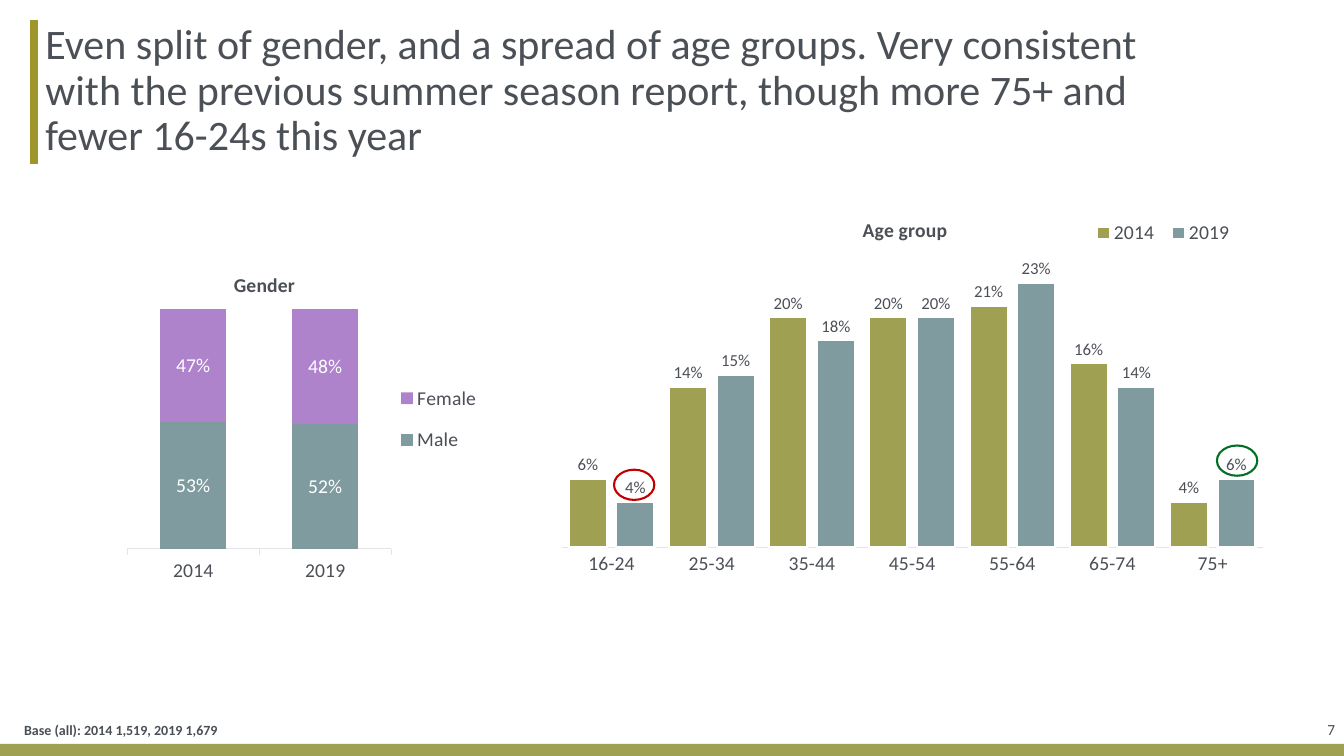
import dataclasses

import pptx
import pptx.chart.data
import pptx.dml.color
import pptx.enum.chart
import pptx.enum.shapes
import pptx.enum.text
import pptx.oxml
import pptx.oxml.ns
import pptx.util

Inches = pptx.util.Inches
Pt = pptx.util.Pt
Color = pptx.dml.color.RGBColor.from_string
Chart = pptx.enum.chart
Align = pptx.enum.text.PP_ALIGN


@dataclasses.dataclass(frozen=True)
class Theme:
    font: str = "Calibri"
    ink: str = "4B4F56"
    white: str = "FFFFFF"
    olive: str = "9FA052"
    bar: str = "9F962B"
    teal: str = "7F9B9F"
    purple: str = "AF82CC"
    axis: str = "E3E4E7"
    rise: str = "007024"
    fall: str = "C00000"
    headline: int = 30
    chart: int = 14
    value: int = 12
    number: int = 11
    base: int = 10


theme = Theme()


def add_text(text, at, size, bold=False, align=Align.LEFT, spacing=1.0, left=0.08, right=0):
    box = page.shapes.add_textbox(*map(Inches, at))
    frame = box.text_frame
    frame.word_wrap = True
    frame.vertical_anchor = pptx.enum.text.MSO_ANCHOR.MIDDLE
    frame.margin_left, frame.margin_right = Inches(left), Inches(right)
    frame.margin_top = frame.margin_bottom = 0
    para = frame.paragraphs[0]
    para.alignment = align
    para.line_spacing = spacing
    span = para.add_run()
    span.text = text
    span.font.name = theme.font
    span.font.size = Pt(size)
    span.font.bold = bold
    span.font.color.rgb = Color(theme.ink)


def set_layout(parent, index, inner=False, **place):
    for old in parent.findall(pptx.oxml.ns.qn("c:layout")):
        parent.remove(old)
    settings = [("layoutTarget", "inner")] if inner else []
    settings += [("xMode", "edge"), ("yMode", "edge"), *place.items()]
    items = "".join(f'<c:{name} val="{value}"/>' for name, value in settings)
    parent.insert(index, pptx.oxml.parse_xml(
        f'<c:layout {pptx.oxml.ns.nsdecls("c")}><c:manualLayout>{items}</c:manualLayout></c:layout>'))


deck = pptx.Presentation()
deck.slide_width = Inches(13.33)
deck.slide_height = Inches(7.5)
page = deck.slides.add_slide(deck.slide_layouts[6])

band = page.shapes.add_shape(pptx.enum.shapes.MSO_SHAPE.RECTANGLE,
                             0, Inches(7.38), deck.slide_width, Inches(0.12))
band.shadow.inherit = False
band.fill.solid()
band.fill.fore_color.rgb = Color(theme.olive)
band.line.fill.background()

rule = page.shapes.add_connector(pptx.enum.shapes.MSO_CONNECTOR.STRAIGHT,
                                 Inches(0.34), Inches(0.2), Inches(0.34), Inches(1.63))
rule.line.color.rgb = Color(theme.bar)
rule.line.width = Pt(6)
rule._element.spPr.append(pptx.oxml.parse_xml(f'<a:effectLst {pptx.oxml.ns.nsdecls("a")}/>'))

add_text("7", (12.42, 6.95, 0.92, 0.58), theme.number, align=Align.RIGHT, right=0.1)
add_text("Even split of gender, and a spread of age groups. Very consistent with the previous "
         "summer season report, though more 75+ and fewer 16-24s this year",
         (0.37, 0.2, 11.65, 1.42), theme.headline, spacing=0.9)
add_text("Base (all): 2014 1,519, 2019 1,679", (0.16, 7.11, 4.52, 0.27), theme.base, bold=True)

charts = [
    dict(title="Gender", at=(0.92, 1.99, 4.4, 4.17),
         kind=Chart.XL_CHART_TYPE.COLUMN_STACKED_100,
         categories=["2014", "2019"],
         series=[("Male", (0.53, 0.52), theme.teal), ("Female", (0.47, 0.48), theme.purple)],
         gap=100, overlap=100, maximum=1, tick=Chart.XL_TICK_MARK.OUTSIDE,
         label=(theme.chart, theme.white, Chart.XL_LABEL_POSITION.CENTER), outline=False,
         legend=Chart.XL_LEGEND_POSITION.RIGHT,
         title_place=dict(x=0.31, y=0.16),
         legend_place=dict(x=0.67, y=0.4, w=0.22, h=0.24),
         plot_place=dict(x=0.078, y=0.258, w=0.595, h=0.571)),
    dict(title="Age group", at=(5.5, 1.89, 7.03, 4.44),
         kind=Chart.XL_CHART_TYPE.COLUMN_CLUSTERED,
         categories=["16-24", "25-34", "35-44", "45-54", "55-64", "65-74", "75+"],
         series=[("2014", (0.06, 0.14, 0.2, 0.2, 0.21, 0.16, 0.04), theme.olive),
                 ("2019", (0.04, 0.15, 0.18, 0.2, 0.23, 0.14, 0.06), theme.teal)],
         gap=38, overlap=-25, maximum=0.25, tick=Chart.XL_TICK_MARK.NONE,
         label=(theme.value, theme.ink, Chart.XL_LABEL_POSITION.OUTSIDE_END), outline=True,
         legend=Chart.XL_LEGEND_POSITION.TOP,
         title_place=dict(x=0.43, y=0.05),
         legend_place=dict(x=0.75, y=0.06, w=0.22, h=0.07),
         plot_place=dict(x=0.01, y=0.155, w=0.99, h=0.643)),
]

for item in charts:
    data = pptx.chart.data.CategoryChartData(number_format="0%")
    data.categories = item["categories"]
    for name, values, _ in item["series"]:
        data.add_series(name, values)
    chart = page.shapes.add_chart(item["kind"], *map(Inches, item["at"]), data).chart
    chart.font.name = theme.font
    chart.font.size = Pt(theme.chart)
    chart.font.color.rgb = Color(theme.ink)

    chart.has_title = True
    chart.chart_title.include_in_layout = False
    para = chart.chart_title.text_frame.paragraphs[0]
    span = para.add_run()
    span.text = item["title"]
    span.font.name = theme.font
    span.font.size = Pt(theme.chart)
    span.font.bold = True
    span.font.color.rgb = Color(theme.ink)

    chart.has_legend = True
    chart.legend.position = item["legend"]
    chart.legend.include_in_layout = False
    chart.legend.font.name = theme.font
    chart.legend.font.size = Pt(theme.chart)
    chart.legend.font.color.rgb = Color(theme.ink)

    value_axis = chart.value_axis
    value_axis.minimum_scale = 0
    value_axis.maximum_scale = item["maximum"]
    value_axis.has_major_gridlines = False
    value_axis.visible = False
    category_axis = chart.category_axis
    category_axis.major_tick_mark = item["tick"]
    category_axis.format.line.color.rgb = Color(theme.axis)
    category_axis.format.line.width = Pt(0.75)

    plot = chart.plots[0]
    plot.vary_by_categories = False
    plot.gap_width = item["gap"]
    plot.overlap = item["overlap"]
    size, color, position = item["label"]
    for series, (_, _, fill) in zip(plot.series, item["series"]):
        series.format.fill.solid()
        series.format.fill.fore_color.rgb = Color(fill)
        if item["outline"]:
            series.format.line.color.rgb = Color(theme.white)
            series.format.line.width = Pt(1.5)
        labels = series.data_labels
        labels.show_value = True
        labels.number_format = "0%"
        labels.number_format_is_linked = False
        labels.position = position
        labels.font.name = theme.font
        labels.font.size = Pt(size)
        labels.font.color.rgb = Color(color)

    set_layout(chart.chart_title._element, 1, **item["title_place"])
    set_layout(chart.legend._element, 1, **item["legend_place"])
    set_layout(chart._chartSpace.chart.plotArea, 0, inner=True, **item["plot_place"])

for left, top, color in [(12.07, 4.42, theme.rise), (6.09, 4.66, theme.fall)]:
    ring = page.shapes.add_shape(pptx.enum.shapes.MSO_SHAPE.OVAL,
                                 Inches(left), Inches(top), Inches(0.4), Inches(0.3))
    ring.shadow.inherit = False
    ring.fill.background()
    ring.line.color.rgb = Color(color)
    ring.line.width = Pt(1.5)

deck.save("out.pptx")
